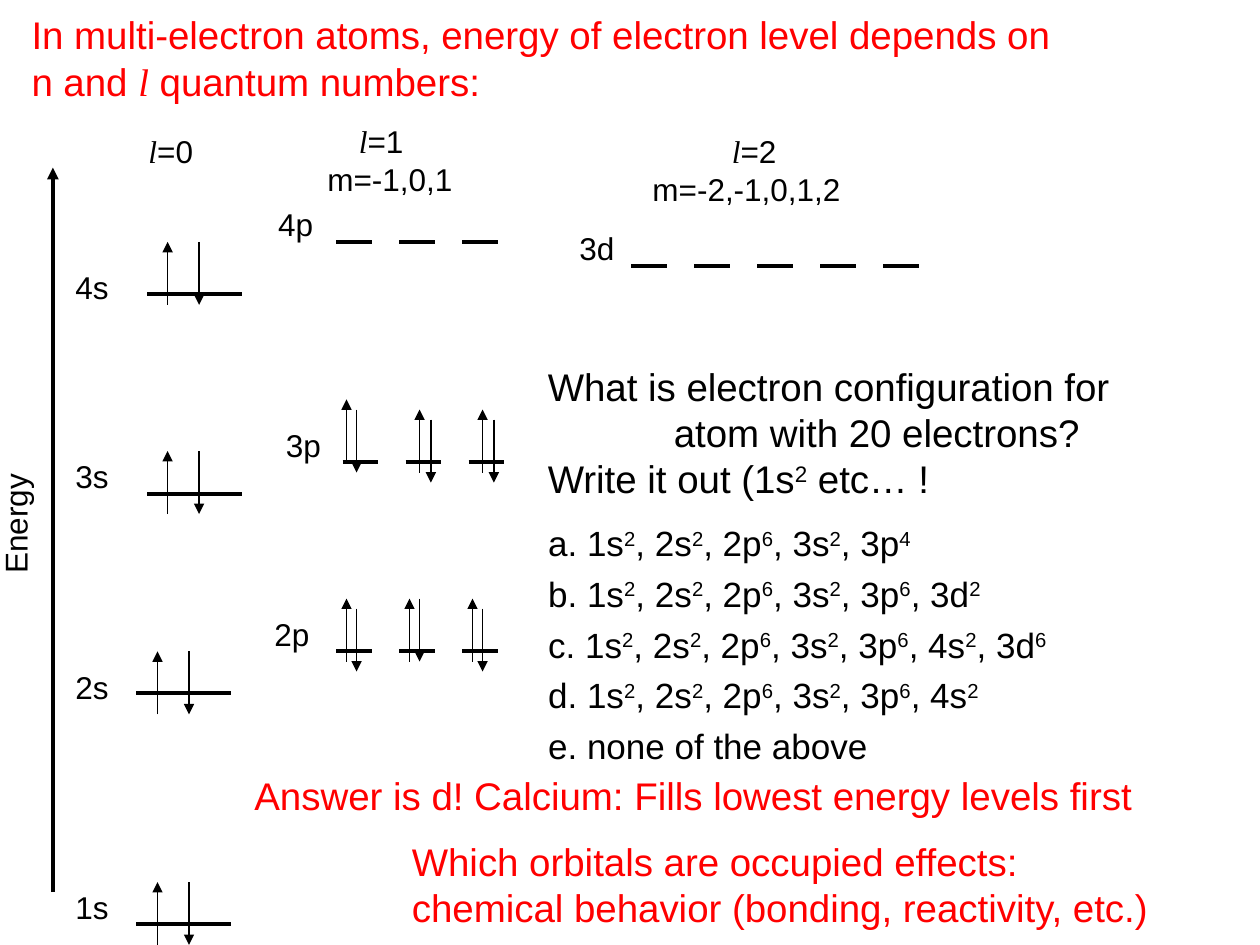
from lxml import etree
from pptx import Presentation
from pptx.dml.color import RGBColor
from pptx.enum.shapes import MSO_CONNECTOR
from pptx.enum.text import MSO_ANCHOR, PP_ALIGN
from pptx.oxml.ns import qn
from pptx.util import Inches, Pt

STRAIGHT = MSO_CONNECTOR.STRAIGHT
TOP, LEFT = MSO_ANCHOR.TOP, PP_ALIGN.LEFT
BLACK, RED = "000000", "FF0000"
ARROW = 0.5
BAR_PITCH = 0.5

LEVELS = [
    {"label": "1s", "at": (0.5, 7), "bar": (1.08, 7.33, 0.75),
     "pairs": [(1.25, 7, 1.5, 7)]},
    {"label": "2s", "at": (0.5, 5.25), "bar": (1.08, 5.5, 0.75),
     "pairs": [(1.25, 5.17, 1.5, 5.17)]},
    {"label": "3s", "at": (0.5, 3.58), "bar": (1.17, 3.92, 0.75),
     "pairs": [(1.33, 3.58, 1.58, 3.58)]},
    {"label": "4s", "at": (0.5, 2.08), "bar": (1.17, 2.33, 0.75),
     "pairs": [(1.33, 1.92, 1.58, 1.92)]},
    {"label": "2p", "at": (2.08, 4.83), "bar": (2.67, 5.17, 0.28), "count": 3,
     "pairs": [(2.75, 4.75, 2.83, 4.83), (3.25, 4.75, 3.33, 4.75),
               (3.75, 4.75, 3.83, 4.83)]},
    {"label": "3p", "at": (2.17, 3.33), "bar": (2.72, 3.67, 0.28), "count": 3,
     "pairs": [(2.75, 3.17, 2.83, 3.25), (3.33, 3.25, 3.42, 3.33),
               (3.83, 3.25, 3.92, 3.33)]},
    {"label": "4p", "at": (2.11, 1.58), "bar": (2.67, 1.92, 0.28), "count": 3},
    {"label": "3d", "at": (4.5, 1.77), "bar": (5.01, 2.11, 0.28), "count": 5},
]
TITLE = ["In multi-electron atoms, energy of electron level depends on",
         "n and *l* quantum numbers:"]
QUESTION = ["What is electron configuration for", "atom with 20 electrons?",
            "Write it out (1s^2 etc… !"]
CHOICES = ["a. 1s^2, 2s^2, 2p^6, 3s^2, 3p^4",
           "b. 1s^2, 2s^2, 2p^6, 3s^2, 3p^6, 3d^2",
           "c. 1s^2, 2s^2, 2p^6, 3s^2, 3p^6, 4s^2, 3d^6",
           "d. 1s^2, 2s^2, 2p^6, 3s^2, 3p^6, 4s^2",
           "e. none of the above"]
EFFECTS = ["Which orbitals are occupied effects:",
           "chemical behavior (bonding, reactivity, etc.)"]


def rgb(color):
    return RGBColor.from_string(color)


def add_run(p, text, size, color, italic=False, raised=False):
    if not text:
        return
    r = p.add_run()
    r.text = text
    name = "Times New Roman" if italic else "Arial"
    for key, value in {"name": name, "size": Pt(size), "italic": italic}.items():
        setattr(r.font, key, value)
    r.font.color.rgb = rgb(color)
    if raised:
        r.font._element.set("baseline", "30000")


def add_marked_text(p, text, size, color):
    for i, part in enumerate(text.split("*")):
        first, *rest = part.split("^")
        add_run(p, first, size, color, italic=i % 2 == 1)
        for piece in rest:
            add_run(p, piece[0], size, color, raised=True)
            add_run(p, piece[1:], size, color)


def fill_text(sp, box, lines, size=18, color=BLACK, indents=(), gap=0):
    for key, value in zip(("left", "top", "width", "height"), box):
        setattr(sp, key, Inches(value))
    tf = sp.text_frame
    tf.word_wrap = True
    tf.vertical_anchor = TOP
    for i, line in enumerate(lines):
        p = tf.paragraphs[0] if i == 0 else tf.add_paragraph()
        p.alignment = LEFT
        p.space_before = Pt(gap if i else 0)
        pPr = p._p.get_or_add_pPr()
        pPr.set("marL", str(Inches(indents[i] if i < len(indents) else 0)))
        pPr.set("indent", "0")
        etree.SubElement(pPr, qn("a:buNone"))
        add_marked_text(p, line, size, color)


def add_text(s, box, lines, **style):
    sp = s.shapes.add_textbox(0, 0, 0, 0)
    fill_text(sp, box, lines, **style)
    return sp


def add_line(s, start, end, width, arrow=False):
    c = s.shapes.add_connector(STRAIGHT, *map(Inches, start + end))
    c.line.color.rgb = rgb(BLACK)
    c.line.width = Pt(width)
    if arrow:
        etree.SubElement(c.line._get_or_add_ln(), qn("a:tailEnd"), type="triangle")
    etree.SubElement(c._element.spPr, qn("a:effectLst"))


def add_level(s, label, at, bar, count=1, pairs=()):
    add_text(s, at + (0.57, 0.5), [label])
    left, y, width = bar
    for i in range(count):
        x = left + i * BAR_PITCH
        add_line(s, (x, y), (x + width, y), 2.25)
    for up_x, up_y, down_x, down_y in pairs:
        add_line(s, (up_x, up_y + ARROW), (up_x, up_y), 1, arrow=True)
        add_line(s, (down_x, down_y), (down_x, down_y + ARROW), 1, arrow=True)


def add_diagram(s):
    add_line(s, (0.42, 7.08), (0.42, 1.33), 2.25, arrow=True)
    add_text(s, (-0.46, 3.77, 1.26, 0.5), ["Energy"]).rotation = 270
    add_text(s, (1.08, 1, 0.67, 0.5), ["*l*=0"])
    add_text(s, (2.5, 0.92, 1.53, 0.9), ["*l*=1", "m=-1,0,1"], indents=(0.25,))
    add_text(s, (5.08, 1, 2.19, 0.9), ["*l*=2", "m=-2,-1,0,1,2"], indents=(0.63,))
    for level in LEVELS:
        add_level(s, **level)


def add_quiz(s, body):
    add_text(s, (4.25, 2.83, 5.7, 1.21), QUESTION, size=22, indents=(0, 1))
    fill_text(body, (4.25, 4.09, 5.58, 2.05), CHOICES, size=20, gap=5)
    add_text(s, (1.92, 6.08, 7.92, 0.47),
             ["Answer is d! Calcium: Fills lowest energy levels first"],
             size=22, color=RED)
    add_text(s, (3.17, 6.6, 6.11, 0.84), EFFECTS, size=22, color=RED)


def main():
    prs = Presentation()
    prs.slide_width, prs.slide_height = Inches(10), Inches(7.5)
    s = prs.slides.add_slide(prs.slide_layouts[1])
    title, body = s.placeholders
    fill_text(title, (0.15, 0.04, 9.68, 0.84), TITLE, size=22, color=RED)
    add_diagram(s)
    add_quiz(s, body)
    prs.save("out.pptx")


if __name__ == "__main__":
    main()
